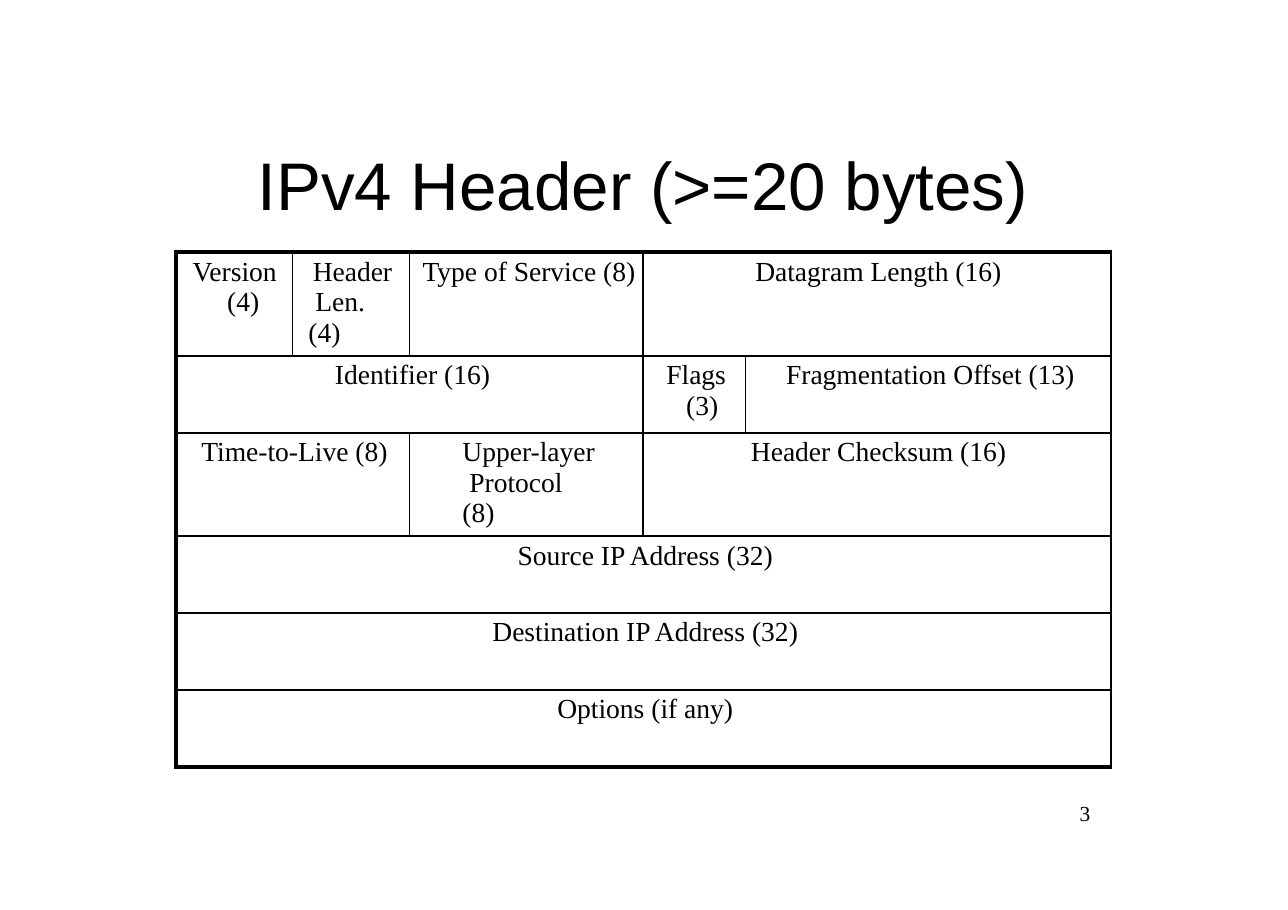
import dataclasses
import lxml.etree
import pptx
import pptx.dml.color
import pptx.enum.text
import pptx.oxml.ns
import pptx.util

Cm = pptx.util.Cm
Pt = pptx.util.Pt
ALIGN = pptx.enum.text.PP_ALIGN
PLAIN_TABLE = "{2D5ABB26-0587-4C30-8999-92F81FD0307C}"


@dataclasses.dataclass(frozen=True)
class Theme:
    """Fonts, type sizes, colours and line widths of the page."""

    title_font: str = "Arial"
    body_font: str = "Times New Roman"
    title_size: float = 44
    field_size: float = 18
    number_size: float = 14
    ink: str = "000000"
    rule: str = "010101"
    frame_line: float = 3
    right_line: float = 2.25
    row_line: float = 1.5
    column_line: float = 1


@dataclasses.dataclass(frozen=True)
class Field:
    """A header field: its label, width in columns and indents in centimetres."""

    label: str
    columns: int = 1
    margin: float = 0
    first: float = 0
    align: ALIGN = ALIGN.LEFT


THEME = Theme()
COLUMN_WIDTHS = (2.69, 2.69, 5.38, 2.36, 8.43)
ROW_HEIGHT = 1.77
HEADER_ROWS = (
    (
        Field("Version\v (4)", margin=1.02, first=-0.64),
        Field("Header\v Len.\v(4)", margin=0.36, first=0.1),
        Field("Type of Service (8)", margin=0.3),
        Field("Datagram Length (16)", 2, margin=2.59),
    ),
    (
        Field("Identifier (16)", 3, margin=3.66),
        Field("Flags\v (3)", margin=0.84, first=-0.3),
        Field("Fragmentation Offset (13)", margin=0.94),
    ),
    (
        Field("Time-to-Live (8)", 2, margin=0.58),
        Field("Upper-layer\v Protocol\v(8)", margin=1.22),
        Field("Header Checksum (16)", 2, margin=2.49),
    ),
    (Field("Source IP Address (32)", 5, margin=0.08, align=ALIGN.CENTER),),
    (Field("Destination IP Address (32)", 5, margin=0.08, align=ALIGN.CENTER),),
    (Field("Options (if any)", 5, margin=0.08, align=ALIGN.CENTER),),
)


def format_text(para, font, size):
    """Give every run of a paragraph its font, size and colour."""
    for span in para.runs:
        span.font.name = font
        span.font.size = Pt(size)
        span.font.color.rgb = pptx.dml.color.RGBColor.from_string(THEME.ink)


def add_text(page, text, area, font, size):
    """Add a text box without margins and return its paragraph."""
    box = page.shapes.add_textbox(*(Cm(length) for length in area))
    frame = box.text_frame
    frame.word_wrap = True
    frame.margin_left = frame.margin_right = 0
    frame.margin_top = frame.margin_bottom = 0
    frame.text = text
    format_text(frame.paragraphs[0], font, size)
    return frame.paragraphs[0]


def set_borders(cell, widths):
    """Draw the cell borders, given as widths by side."""
    properties = cell._tc.get_or_add_tcPr()
    for side, width in widths.items():
        line = lxml.etree.SubElement(
            properties, pptx.oxml.ns.qn(f"a:ln{side}"), w=str(Pt(width))
        )
        fill = lxml.etree.SubElement(line, pptx.oxml.ns.qn("a:solidFill"))
        lxml.etree.SubElement(fill, pptx.oxml.ns.qn("a:srgbClr"), val=THEME.rule)


def border_widths(row, column, end):
    """Find the border widths of a field from its place in the table."""
    last_row = len(HEADER_ROWS) - 1
    return {
        "L": THEME.frame_line if column == 0 else THEME.column_line,
        "R": THEME.right_line if end == len(COLUMN_WIDTHS) else THEME.column_line,
        "T": THEME.frame_line if row == 0 else THEME.row_line,
        "B": THEME.frame_line if row == last_row else THEME.row_line,
    }


def fill_field(cell, field):
    """Write the label of a field into its cell."""
    cell.margin_left = cell.margin_right = cell.margin_bottom = 0
    cell.margin_top = Cm(0.1)
    cell.text_frame.text = field.label
    para = cell.text_frame.paragraphs[0]
    para.alignment = field.align
    para.space_before = Pt(3)
    indents = para._p.get_or_add_pPr()
    indents.set("marL", str(Cm(field.margin)))
    indents.set("indent", str(Cm(field.first)))
    format_text(para, THEME.body_font, THEME.field_size)


def add_header_table(page, left, top):
    """Add the table of header fields, merging cells for the wide ones."""
    table = page.shapes.add_table(
        len(HEADER_ROWS), len(COLUMN_WIDTHS), Cm(left), Cm(top),
        Cm(sum(COLUMN_WIDTHS)), Cm(ROW_HEIGHT * len(HEADER_ROWS)),
    ).table
    table.first_row = table.horz_banding = False
    table._tbl.tblPr.find(pptx.oxml.ns.qn("a:tableStyleId")).text = PLAIN_TABLE
    for column, width in zip(table.columns, COLUMN_WIDTHS):
        column.width = Cm(width)
    for row, fields in enumerate(HEADER_ROWS):
        table.rows[row].height = Cm(ROW_HEIGHT)
        column = 0
        for field in fields:
            cell = table.cell(row, column)
            end = column + field.columns
            if field.columns > 1:
                cell.merge(table.cell(row, end - 1))
            fill_field(cell, field)
            set_borders(cell, border_widths(row, column, end))
            column = end
    for cell in table.iter_cells():
        cell.fill.background()


def main():
    """Build the page and save the deck."""
    deck = pptx.Presentation()
    deck.slide_width, deck.slide_height = Cm(29.69), Cm(20.98)
    page = deck.slides.add_slide(deck.slide_layouts[6])
    add_text(page, "IPv4 Header (>=20 bytes)", (5.94, 3.3, 18.2, 1.93),
             THEME.title_font, THEME.title_size)
    add_header_table(page, 4.06, 5.82)
    number = add_text(page, "3", (24.89, 18.47, 0.64, 0.61),
                      THEME.body_font, THEME.number_size)
    number.line_spacing = Pt(16.2)
    deck.save("out.pptx")


if __name__ == "__main__":
    main()
